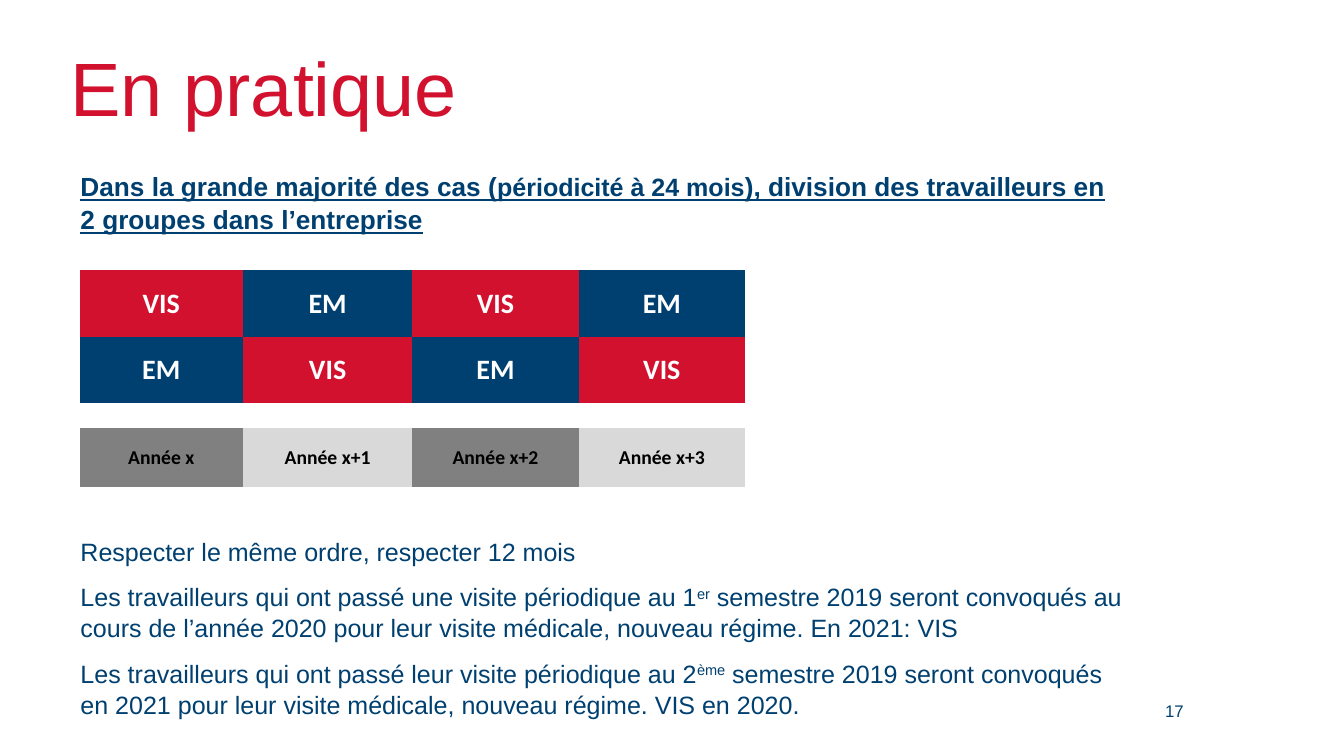
from dataclasses import dataclass, field
from typing import Any

from lxml import etree
from pptx import Presentation
from pptx.dml.color import RGBColor
from pptx.enum.text import MSO_ANCHOR, PP_ALIGN
from pptx.oxml.ns import qn
from pptx.util import Emu, Pt

LEFT, CENTER, RIGHT = PP_ALIGN.LEFT, PP_ALIGN.CENTER, PP_ALIGN.RIGHT
TOP, MIDDLE = MSO_ANCHOR.TOP, MSO_ANCHOR.MIDDLE
EMU_PER_PX = 9144
SLIDE_SIZE = (1333, 750)
PLAIN_TABLE_STYLE = "{2D5ABB26-0587-4C30-8999-92F81FD0307C}"


@dataclass(frozen=True)
class Theme:
    red: str = "D2112F"
    blue: str = "004070"
    dark_grey: str = "808080"
    light_grey: str = "D9D9D9"
    white: str = "FFFFFF"
    black: str = "000000"
    text_font: str = "Arial"
    table_font: str = "Calibri"
    title_size: float = 54
    heading_size: float = 18.7
    body_size: float = 17.9
    visit_size: float = 20
    year_size: float = 14
    number_size: float = 12
    gap_size: float = 8


THEME = Theme()


@dataclass(frozen=True)
class Piece:
    """A stretch of text with the format values that differ from its box."""
    text: str
    format: dict[str, Any] = field(default_factory=dict)
    raised: bool = False


@dataclass(frozen=True)
class TextBlock:
    left: int
    top: int
    width: int
    height: int
    paragraphs: list[list[Piece]]
    size: float
    color: str = THEME.blue
    align: PP_ALIGN = LEFT
    anchor: MSO_ANCHOR = TOP
    line_spacing: float = 1.0


@dataclass(frozen=True)
class TableRow:
    height: int
    labels: list[str]
    fills: list[str]
    size: float
    color: str


def px(length: int) -> Emu:
    return Emu(length * EMU_PER_PX)


def add_piece(paragraph: Any, piece: Piece, font: str, size: float, color: str) -> None:
    run = paragraph.add_run()
    run.text = piece.text
    values = {"name": font, "size": Pt(size), **piece.format}
    for name, value in values.items():
        setattr(run.font, name, value)
    run.font.color.rgb = RGBColor.from_string(color)
    if piece.raised:
        run._r.get_or_add_rPr().set("baseline", "30000")


def add_text_block(slide: Any, block: TextBlock) -> None:
    position = map(px, (block.left, block.top, block.width, block.height))
    frame = slide.shapes.add_textbox(*position).text_frame
    frame.word_wrap = True
    frame.vertical_anchor = block.anchor
    for index, pieces in enumerate(block.paragraphs):
        paragraph = frame.add_paragraph() if index else frame.paragraphs[0]
        paragraph.alignment = block.align
        paragraph.line_spacing = block.line_spacing
        paragraph.space_before = Pt(10 if index else 0)
        for piece in pieces:
            add_piece(paragraph, piece, THEME.text_font, block.size, block.color)


def fill_cell(cell: Any, label: str, fill: str, row: TableRow) -> None:
    cell.fill.solid()
    cell.fill.fore_color.rgb = RGBColor.from_string(fill)
    paragraph = cell.text_frame.paragraphs[0]
    paragraph.alignment = CENTER
    add_piece(paragraph, Piece(label, {"bold": True}), THEME.table_font, row.size, row.color)


def clear_cell(cell: Any) -> None:
    """Leave a cell empty, with text small enough for its low row."""
    cell.fill.background()
    paragraph = cell.text_frame.paragraphs[0]
    end = etree.SubElement(paragraph._p, qn("a:endParaRPr"))
    end.set("sz", str(THEME.gap_size * 100))


def add_schedule(slide: Any, left: int, top: int, widths: list[int], rows: list[TableRow]) -> None:
    height = sum(row.height for row in rows)
    frame = slide.shapes.add_table(
        len(rows), len(widths), px(left), px(top), px(sum(widths)), px(height))
    for style in frame.element.iter(qn("a:tableStyleId")):
        style.text = PLAIN_TABLE_STYLE
    table = frame.table
    table.first_row = table.horz_banding = False
    for column, width in zip(table.columns, widths):
        column.width = px(width)
    cell_format = {"margin_left": px(1), "margin_right": px(1), "margin_top": px(1),
                   "margin_bottom": px(0), "vertical_anchor": MIDDLE}
    for row_index, row in enumerate(rows):
        table.rows[row_index].height = px(row.height)
        for column_index in range(len(widths)):
            cell = table.cell(row_index, column_index)
            for name, value in cell_format.items():
                setattr(cell, name, value)
            if row.labels:
                fill_cell(cell, row.labels[column_index], row.fills[column_index], row)
            else:
                clear_cell(cell)


HEADING = {"bold": True, "underline": True}
TEXT_BLOCKS = [
    TextBlock(1121, 690, 63, 30, [[Piece("17")]], THEME.number_size, align=RIGHT),
    TextBlock(60, 54, 1257, 74, [[Piece("En pratique")]], THEME.title_size,
              THEME.red, anchor=MIDDLE, line_spacing=0.9),
    TextBlock(70, 163, 1054, 75, [[
        Piece("Dans la grande majorité des cas (", HEADING),
        Piece("périodicité à 24 mois", {**HEADING, "size": Pt(THEME.body_size)}),
        Piece("), division des travailleurs en 2 groupes dans l’entreprise", HEADING),
    ]], THEME.heading_size, line_spacing=1.05),
    TextBlock(70, 526, 1054, 206, [
        [Piece("Respecter le même ordre, respecter 12 mois")],
        [Piece("Les travailleurs qui ont passé une visite périodique au 1"),
         Piece("er", raised=True),
         Piece(" semestre 2019 seront convoqués au cours de l’année 2020 pour leur "
               "visite médicale, nouveau régime. En 2021: VIS")],
        [Piece("Les travailleurs qui ont passé leur visite périodique au 2"),
         Piece("ème", raised=True),
         Piece(" semestre 2019 seront convoqués en 2021 pour leur visite médicale, "
               "nouveau régime. VIS en 2020.")],
    ], THEME.body_size, line_spacing=1.04),
]
VISIT_FILLS = {"VIS": THEME.red, "EM": THEME.blue}


def visit_row(labels: list[str]) -> TableRow:
    fills = [VISIT_FILLS[label] for label in labels]
    return TableRow(66, labels, fills, THEME.visit_size, THEME.white)


SCHEDULE_ROWS = [
    visit_row(["VIS", "EM"] * 2),
    visit_row(["EM", "VIS"] * 2),
    TableRow(25, [], [], THEME.gap_size, THEME.black),
    TableRow(58, ["Année x", "Année x+1", "Année x+2", "Année x+3"],
             [THEME.dark_grey, THEME.light_grey] * 2, THEME.year_size, THEME.black),
]


def main() -> None:
    presentation = Presentation()
    presentation.slide_width, presentation.slide_height = map(px, SLIDE_SIZE)
    slide = presentation.slides.add_slide(presentation.slide_layouts[6])
    for block in TEXT_BLOCKS:
        add_text_block(slide, block)
    add_schedule(slide, 79, 268, [162, 168, 165, 165], SCHEDULE_ROWS)
    presentation.save("out.pptx")


if __name__ == "__main__":
    main()
